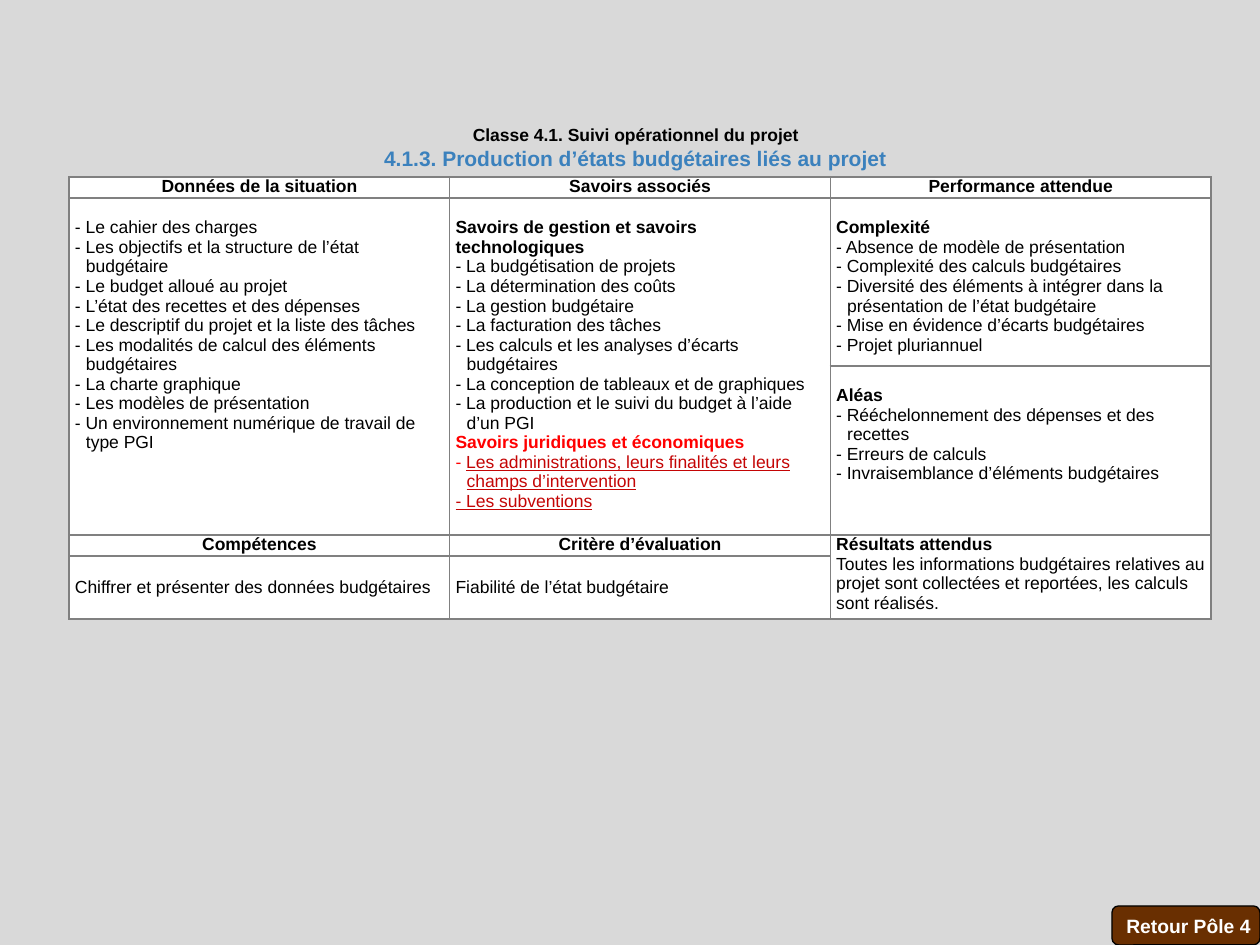
import dataclasses
import typing

import lxml.etree
import pptx
import pptx.dml.color
import pptx.enum.shapes
import pptx.enum.text
import pptx.oxml.ns
import pptx.util

PX = 914400 // 126  # EMU in one px
ALIGN = pptx.enum.text.PP_ALIGN
ANCHOR = pptx.enum.text.MSO_ANCHOR


@dataclasses.dataclass(frozen=True)
class Theme:
    font: str = "Arial"
    back: str = "D9D9D9"
    white: str = "FFFFFF"
    black: str = "000000"
    blue: str = "3B81BD"
    red: str = "FF0000"
    dark: str = "C40505"
    brown: str = "692F01"
    grid: str = "808080"
    body: int = 10
    title: int = 12
    button: int = 11


THEME = Theme()


@dataclasses.dataclass(frozen=True)
class Run:
    words: str
    size: int = THEME.body
    color: str = THEME.black
    bold: bool = False
    under: bool = False


@dataclasses.dataclass(frozen=True)
class Cell:
    row: int
    col: int
    lines: list
    align: typing.Any = ALIGN.LEFT
    anchor: typing.Any = ANCHOR.TOP
    top: int = 0
    span: int = 1


def rgb(code: str) -> pptx.dml.color.RGBColor:
    return pptx.dml.color.RGBColor.from_string(code)


def px(size: int) -> int:
    return size * PX


def text(par, words: str, *, size: int, color: str, bold: bool, under: bool) -> None:
    run = par.add_run()
    run.text = words
    font = run.font
    font.name, font.size = THEME.font, pptx.util.Pt(size)
    font.bold, font.underline = bold, under
    font.color.rgb = rgb(color)


def write(frame, lines: list, align=ALIGN.LEFT) -> None:
    """One paragraph per line; a line is a list of runs, and dashes hang."""
    for i, line in enumerate(lines):
        par = frame.paragraphs[0] if i == 0 else frame.add_paragraph()
        par.alignment = align
        if line[0].words.startswith("- "):
            props = par._p.get_or_add_pPr()
            props.set("marL", str(px(11)))
            props.set("indent", str(-px(11)))
        for run in line:
            text(par, **dataclasses.asdict(run))


def border(cell) -> None:
    props = cell._tc.get_or_add_tcPr()
    for side in ("lnL", "lnR", "lnT", "lnB"):
        line = lxml.etree.SubElement(props, pptx.oxml.ns.qn(f"a:{side}"), w="12700")
        fill = lxml.etree.SubElement(line, pptx.oxml.ns.qn("a:solidFill"))
        lxml.etree.SubElement(fill, pptx.oxml.ns.qn("a:srgbClr"), val=THEME.grid)


def draw(table, item: Cell) -> None:
    cell = table.cell(item.row, item.col)
    if item.span > 1:
        cell.merge(table.cell(item.row + item.span - 1, item.col))
    cell.margin_top = px(item.top)
    cell.vertical_anchor = item.anchor
    write(cell.text_frame, item.lines, item.align)


def plain(*items: str) -> list:
    return [[Run(item)] for item in items]


def head(words: str, color: str = THEME.black) -> list:
    return [[Run(words, color=color, bold=True)]]


# Table content
GIVEN = plain(
    "- Le cahier des charges",
    "- Les objectifs et la structure de l’état budgétaire",
    "- Le budget alloué au projet",
    "- L’état des recettes et des dépenses",
    "- Le descriptif du projet et la liste des tâches",
    "- Les modalités de calcul des éléments budgétaires",
    "- La charte graphique",
    "- Les modèles de présentation",
    "- Un environnement numérique de travail de type PGI",
)
SKILLS = head("Savoirs de gestion et savoirs technologiques") + plain(
    "- La budgétisation de projets",
    "- La détermination des coûts",
    "- La gestion budgétaire",
    "- La facturation des tâches",
    "- Les calculs et les analyses d’écarts budgétaires",
    "- La conception de tableaux et de graphiques",
    "- La production et le suivi du budget à l’aide d’un PGI",
) + head("Savoirs juridiques et économiques", THEME.red) + [
    [Run("- ", color=THEME.red),
     Run("Les administrations, leurs finalités et leurs champs d’intervention",
         color=THEME.dark, under=True)],
    [Run("- Les subventions", color=THEME.dark, under=True)],
]
LEVEL = head("Complexité") + plain(
    "- Absence de modèle de présentation",
    "- Complexité des calculs budgétaires",
    "- Diversité des éléments à intégrer dans la présentation de l’état budgétaire",
    "- Mise en évidence d’écarts budgétaires",
    "- Projet pluriannuel",
)
RISKS = head("Aléas") + plain(
    "- Rééchelonnement des dépenses et des recettes",
    "- Erreurs de calculs",
    "- Invraisemblance d’éléments budgétaires",
)
RESULT = head("Résultats attendus") + plain(
    "Toutes les informations budgétaires relatives au projet sont collectées "
    "et reportées, les calculs sont réalisés."
)
HEADS = [
    (0, 0, "Données de la situation"),
    (0, 1, "Savoirs associés"),
    (0, 2, "Performance attendue"),
    (3, 0, "Compétences"),
    (3, 1, "Critère d’évaluation"),
]
CELLS = [Cell(row, col, head(words), ALIGN.CENTER) for row, col, words in HEADS] + [
    Cell(1, 0, GIVEN, top=20, span=2),
    Cell(1, 1, SKILLS, top=20, span=2),
    Cell(1, 2, LEVEL, top=20),
    Cell(2, 2, RISKS, top=20),
    Cell(3, 2, RESULT, span=2),
    Cell(4, 0, plain("Chiffrer et présenter des données budgétaires"), anchor=ANCHOR.MIDDLE),
    Cell(4, 1, plain("Fiabilité de l’état budgétaire"), anchor=ANCHOR.MIDDLE),
]
ROWS = [21, 168, 169, 21, 63]
WIDE = 1142


def main() -> None:
    deck = pptx.Presentation()
    deck.slide_width, deck.slide_height = px(1260), px(945)
    slide = deck.slides.add_slide(deck.slide_layouts[6])
    slide.background.fill.solid()
    slide.background.fill.fore_color.rgb = rgb(THEME.back)

    # Title
    box = slide.shapes.add_textbox(px(69), px(118), px(WIDE), px(59))
    frame = box.text_frame
    frame.word_wrap, frame.vertical_anchor = True, ANCHOR.MIDDLE
    write(frame, head("Classe 4.1. Suivi opérationnel du projet") + [
        [Run("4.1.3. Production d’états budgétaires liés au projet",
             size=THEME.title, color=THEME.blue, bold=True)],
    ], ALIGN.CENTER)
    frame.paragraphs[0]._p.get_or_add_pPr().set("marR", str(px(9)))

    # Table
    table = slide.shapes.add_table(
        len(ROWS), 3, px(69), px(177), px(WIDE), px(sum(ROWS))).table
    table.first_row = table.horz_banding = False
    for row, high in zip(table.rows, ROWS):
        row.height = px(high)
    for cell in table.iter_cells():
        border(cell)
        cell.fill.solid()
        cell.fill.fore_color.rgb = rgb(THEME.white)
        cell.margin_left = cell.margin_right = px(6)
        cell.margin_top = cell.margin_bottom = 0
        cell.text_frame.paragraphs[0].font.size = pptx.util.Pt(THEME.body)
    for item in CELLS:
        draw(table, item)

    # Return button
    kind = pptx.enum.shapes.MSO_SHAPE.ROUNDED_RECTANGLE
    button = slide.shapes.add_shape(kind, px(1112), px(906), px(148), px(39))
    button.shadow.inherit = False
    button.fill.solid()
    button.fill.fore_color.rgb = rgb(THEME.brown)
    button.line.color.rgb = rgb(THEME.black)
    button.line.width = pptx.util.Pt(0.75)
    frame = button.text_frame
    frame.word_wrap, frame.vertical_anchor = False, ANCHOR.MIDDLE
    write(frame, [[Run("Retour Pôle 4", THEME.button, THEME.white, bold=True)]])

    deck.save("out.pptx")


if __name__ == "__main__":
    main()
